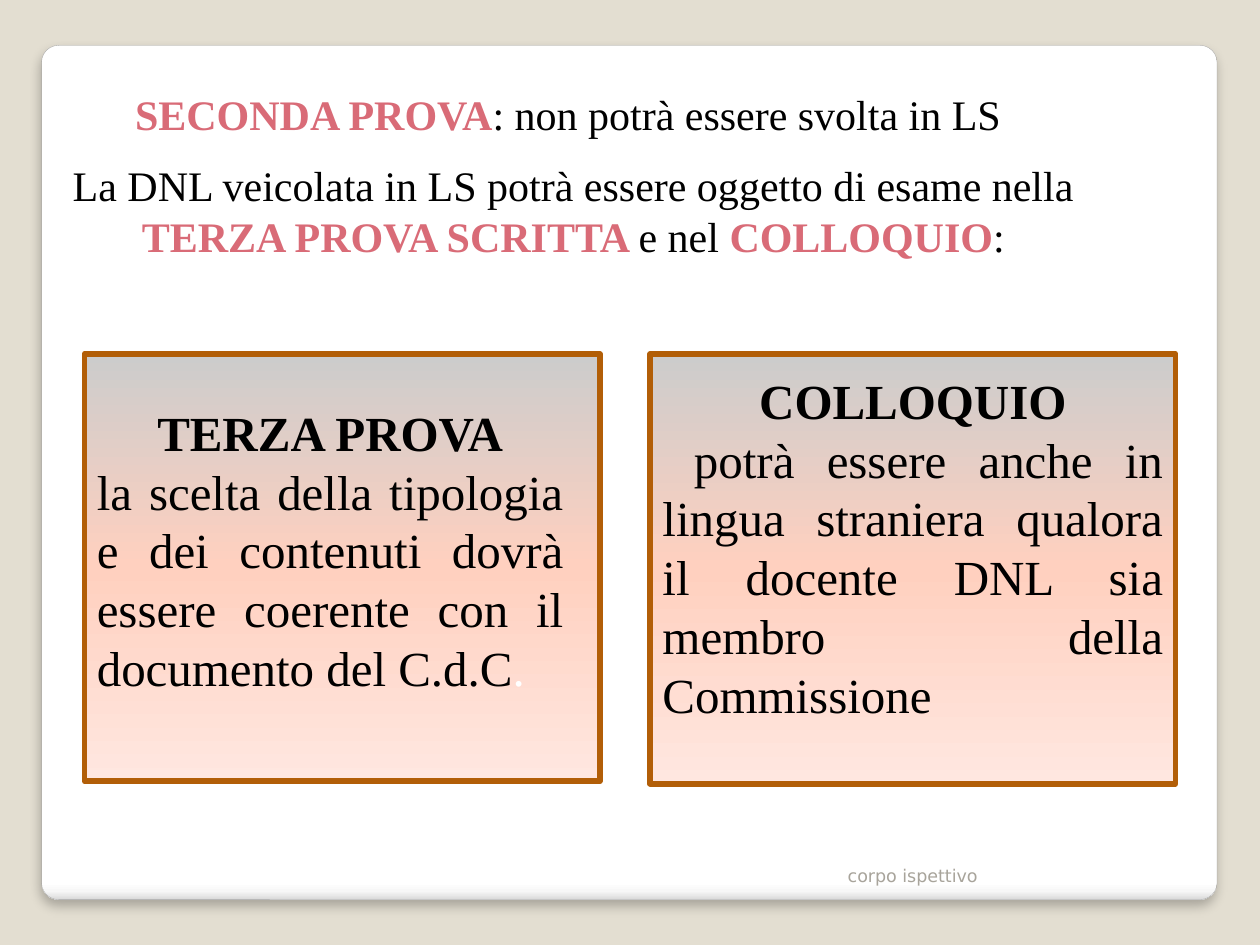
from lxml.etree import SubElement
from pptx import Presentation
from pptx.dml.color import RGBColor
from pptx.enum.shapes import MSO_SHAPE
from pptx.enum.text import MSO_ANCHOR, PP_ALIGN
from pptx.oxml.ns import qn
from pptx.util import Inches, Pt

COLORS = {
    "background": "E3DED1", "panel_line": "A4A4A4", "accent": "D96B77",
    "text": "000000", "border": "B25E07", "footer": "A8A49B", "white": "FFFFFF",
}
PANEL_STOPS = [(0, "FFFFFF"), (98, "FFFFFF"), (99, "F7F7F7"), (100, "DADADA")]
CARD_STOPS = [(0, "CCCCCC"), (50, "FFD0BF"), (100, "FFE7E0")]


def set_gradient(shape, stops):
    shape.fill.gradient()
    shape.fill.gradient_angle = 270
    stop_list = shape._element.spPr.find(qn("a:gradFill")).find(qn("a:gsLst"))
    for stop in list(stop_list):
        stop_list.remove(stop)
    for percent, color in stops:
        stop = SubElement(stop_list, qn("a:gs"), pos=str(percent * 1000))
        SubElement(stop, qn("a:srgbClr"), val=color)


def fill_paragraph(para, spans, size, align, font="Times New Roman"):
    para.alignment = align
    para.font.name = font
    para.font.size = Pt(size)
    para.line_spacing = Pt(size * 1.2)
    for text, color, bold in spans:
        span = para.add_run()
        span.text = text
        span.font.bold = bold
        span.font.color.rgb = RGBColor.from_string(COLORS[color])


deck = Presentation()
deck.slide_width = Inches(10)
deck.slide_height = Inches(7.5)
page = deck.slides.add_slide(deck.slide_layouts[6])
page.background.fill.solid()
page.background.fill.fore_color.rgb = RGBColor.from_string(COLORS["background"])

panel = page.shapes.add_shape(
    MSO_SHAPE.ROUNDED_RECTANGLE, Inches(0.33), Inches(0.36), Inches(9.33), Inches(6.78))
panel.adjustments[0] = 0.02
set_gradient(panel, PANEL_STOPS)
panel.line.color.rgb = RGBColor.from_string(COLORS["panel_line"])
panel.line.width = Pt(0.16)
panel.shadow.inherit = False
effects = panel._element.spPr.find(qn("a:effectLst"))
shadow = SubElement(effects, qn("a:outerShdw"), blurRad=str(Pt(6)), dist=str(Pt(4)),
                    dir="5400000", algn="tl", rotWithShape="0")
shadow_color = SubElement(shadow, qn("a:srgbClr"), val=COLORS["text"])
SubElement(shadow_color, qn("a:alpha"), val="25000")

intro = page.shapes.add_textbox(Inches(0), Inches(0.6), Inches(9), Inches(4.53))
frame = intro.text_frame
frame.word_wrap = True
frame.margin_left = Inches(0.2)
frame.margin_top = Inches(0.1)
statements = [
    [("SECONDA PROVA", "accent", True),
     (": non potrà essere svolta in LS ", "text", False)],
    [("La DNL veicolata in LS potrà essere oggetto di esame nella ", "text", False),
     ("TERZA PROVA SCRITTA ", "accent", True),
     ("e nel ", "text", False),
     ("COLLOQUIO", "accent", True),
     (":", "text", False)],
]
for index, spans in enumerate(statements):
    para = frame.add_paragraph() if index else frame.paragraphs[0]
    fill_paragraph(para, spans, 24, PP_ALIGN.CENTER)
    para.space_before = para.space_after = Pt(6)

cards = [
    (0.67, 4.09, 3.39, 0.34, 0.19, 0, "TERZA PROVA",
     [("la scelta della tipologia e dei contenuti dovrà essere coerente "
       "con il documento del C.d.C", "text", False), (".", "white", False)]),
    (5.16, 4.17, 3.41, 0.4, 0, 0.25, "COLLOQUIO",
     [("potrà essere anche in lingua straniera qualora il docente DNL sia "
       "membro della Commissione", "text", False)]),
]
for left, width, height, bottom, heading_margin, indent, heading, body in cards:
    card = page.shapes.add_shape(
        MSO_SHAPE.RECTANGLE, Inches(left), Inches(2.81), Inches(width), Inches(height))
    set_gradient(card, CARD_STOPS)
    card.line.color.rgb = RGBColor.from_string(COLORS["border"])
    card.line.width = Pt(3.35)
    card.shadow.inherit = False
    frame = card.text_frame
    frame.word_wrap = True
    frame.vertical_anchor = MSO_ANCHOR.MIDDLE
    frame.margin_bottom = Inches(bottom)
    para = frame.paragraphs[0]
    fill_paragraph(para, [(heading, "text", True)], 28, PP_ALIGN.CENTER)
    para._p.get_or_add_pPr().set("marR", str(Inches(heading_margin)))
    para = frame.add_paragraph()
    fill_paragraph(para, body, 28, PP_ALIGN.JUSTIFY)
    para._p.get_or_add_pPr().set("indent", str(Inches(indent)))

footer = page.shapes.add_textbox(Inches(6.63), Inches(6.68), Inches(2.5), Inches(0.4))
footer.text_frame.word_wrap = True
footer.text_frame.vertical_anchor = MSO_ANCHOR.BOTTOM
fill_paragraph(footer.text_frame.paragraphs[0], [("corpo ispettivo", "footer", False)],
               10, PP_ALIGN.LEFT, "DejaVu Sans")

deck.save("out.pptx")
